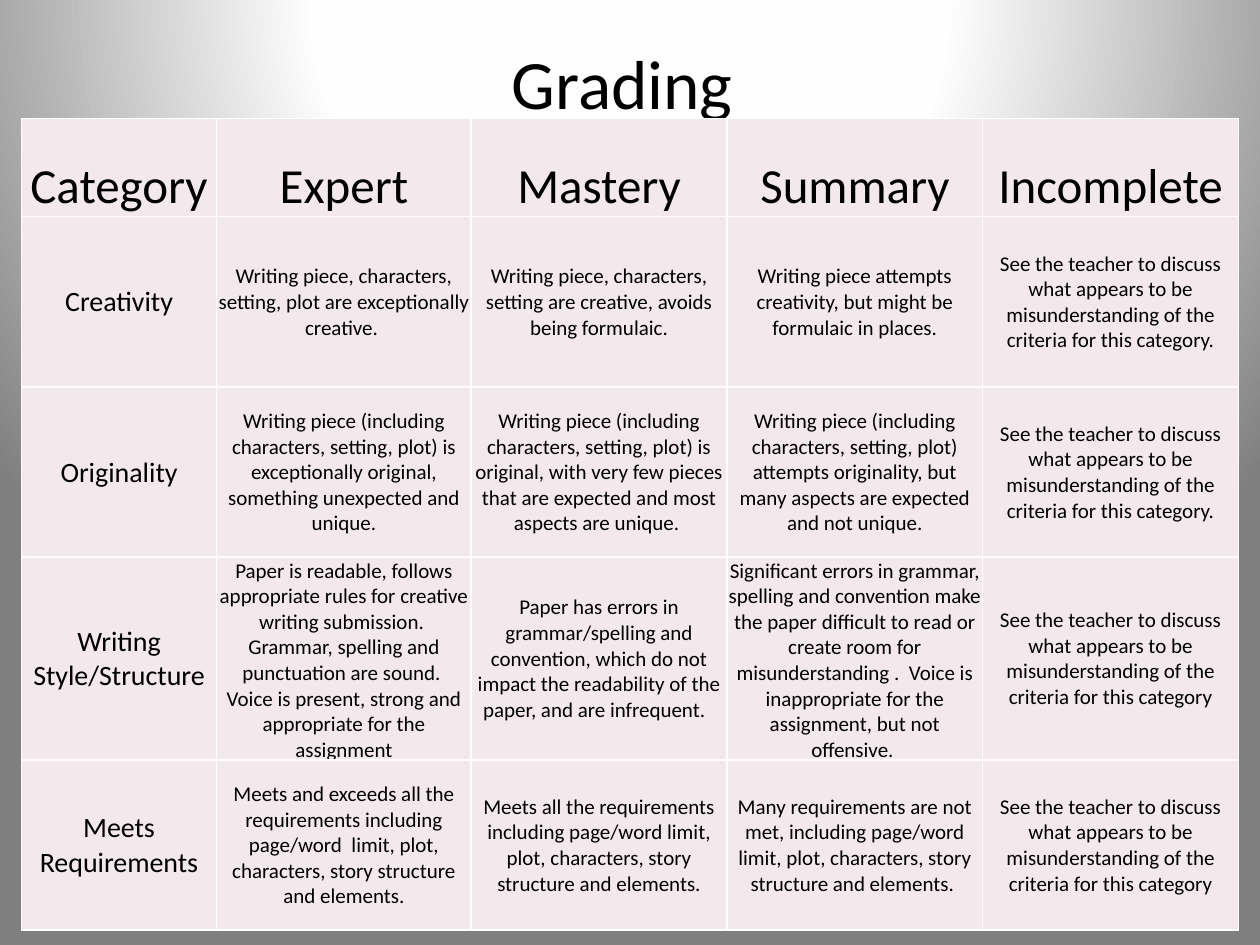
from dataclasses import dataclass
from pptx import Presentation
from pptx.dml.color import RGBColor
from pptx.enum.text import MSO_ANCHOR as Anchor, PP_ALIGN as Align
from pptx.oxml import parse_xml
from pptx.oxml.ns import nsdecls
from pptx.util import Inches, Pt


@dataclass(frozen=True)
class Theme:
    font: str = "Calibri"
    text: str = "000000"
    cell: str = "F3E8EB"
    border: str = "FFFFFF"
    backdrop: tuple = ((0, "FFFFFF"), (40, "FEFEFE"), (100, "7F7F7F"))
    title_size: float = 39.6
    header_size: float = 28
    category_size: float = 16
    body_size: float = 12


THEME = Theme()
COLUMN_WIDTHS = [1.55, 2.02, 2.03, 2.03, 2.03]
ROW_HEIGHTS = [0.78] + [1.35] * 4
SEE_TEACHER = ("See the teacher to discuss what appears to be "
               "misunderstanding of the criteria for this category")

RUBRIC = [
    ["Category", "Expert", "Mastery", "Summary", "Incomplete"],
    ["Creativity",
     "Writing piece, characters, setting, plot are exceptionally creative. ",
     "Writing piece, characters, setting are creative, avoids being formulaic.",
     "Writing piece attempts creativity, but might be formulaic in places.",
     SEE_TEACHER + "."],
    ["Originality",
     "Writing piece (including characters, setting, plot) is exceptionally "
     "original, something unexpected and unique.",
     "Writing piece (including characters, setting, plot) is original, with "
     "very few pieces that are expected and most aspects are unique. ",
     "Writing piece (including characters, setting, plot) attempts "
     "originality, but many aspects are expected and not unique.",
     SEE_TEACHER + "."],
    ["Writing Style/Structure",
     "Paper is readable, follows appropriate rules for creative writing "
     "submission.  Grammar, spelling and punctuation are sound.  Voice is "
     "present, strong and appropriate for the assignment",
     "Paper has errors in grammar/spelling and convention, which do not "
     "impact the readability of the paper, and are infrequent.  ",
     "Significant errors in grammar, spelling and convention make the paper "
     "difficult to read or create room for misunderstanding .  Voice is "
     "inappropriate for the assignment, but not offensive. ",
     SEE_TEACHER],
    ["Meets Requirements",
     "Meets and exceeds all the requirements including page/word  limit, "
     "plot, characters, story structure and elements.",
     "Meets all the requirements including page/word limit, plot, "
     "characters, story structure and elements.",
     "Many requirements are not met, including page/word limit, plot, "
     "characters, story structure and elements. ",
     SEE_TEACHER],
]


def set_background(page):
    """Fill the page with a circular gradient centred above it."""
    stops = "".join(
        f'<a:gs pos="{place * 1000}"><a:srgbClr val="{color}"/></a:gs>'
        for place, color in THEME.backdrop)
    background = parse_xml(
        f'<p:bg {nsdecls("p", "a")}><p:bgPr><a:gradFill rotWithShape="1">'
        f'<a:gsLst>{stops}</a:gsLst><a:path path="circle">'
        '<a:fillToRect l="50000" t="-80000" r="50000" b="180000"/></a:path>'
        '</a:gradFill><a:effectLst/></p:bgPr></p:bg>')
    page.element.cSld.insert(0, background)


def write_text(frame, text, size):
    frame.text = text
    frame.word_wrap = True
    para = frame.paragraphs[0]
    para.alignment = Align.CENTER
    font = para.runs[0].font
    font.name = THEME.font
    font.size = Pt(size)
    font.color.rgb = RGBColor.from_string(THEME.text)


def add_title(page, text):
    box = page.shapes.add_textbox(Inches(0.5), Inches(0.3), Inches(9), Inches(0.7))
    write_text(box.text_frame, text, THEME.title_size)
    box.text_frame.vertical_anchor = Anchor.MIDDLE


def set_borders(cell):
    properties = cell._tc.get_or_add_tcPr()
    for position, side in enumerate(("lnL", "lnR", "lnT", "lnB")):
        properties.insert(position, parse_xml(
            f'<a:{side} {nsdecls("a")} w="{Pt(1)}"><a:solidFill>'
            f'<a:srgbClr val="{THEME.border}"/></a:solidFill></a:{side}>'))


def format_cell(cell, text, size, anchor):
    write_text(cell.text_frame, text, size)
    cell.vertical_anchor = anchor
    cell.margin_left = cell.margin_right = cell.margin_top = Inches(0.01)
    cell.margin_bottom = 0
    cell.fill.solid()
    cell.fill.fore_color.rgb = RGBColor.from_string(THEME.cell)
    set_borders(cell)


def add_rubric(page):
    table = page.shapes.add_table(
        len(ROW_HEIGHTS), len(COLUMN_WIDTHS), Inches(0.17), Inches(0.94),
        Inches(sum(COLUMN_WIDTHS)), Inches(sum(ROW_HEIGHTS))).table
    for column, width in zip(table.columns, COLUMN_WIDTHS):
        column.width = Inches(width)
    for row, height, texts in zip(table.rows, ROW_HEIGHTS, RUBRIC):
        row.height = Inches(height)
        is_header = texts is RUBRIC[0]
        anchor = Anchor.BOTTOM if is_header else Anchor.MIDDLE
        for index, (cell, text) in enumerate(zip(row.cells, texts)):
            size = THEME.body_size if index else THEME.category_size
            format_cell(cell, text, THEME.header_size if is_header else size, anchor)


def main():
    deck = Presentation()
    deck.slide_width, deck.slide_height = Inches(10), Inches(7.5)
    page = deck.slides.add_slide(deck.slide_layouts[6])
    set_background(page)
    add_title(page, "Grading ")
    add_rubric(page)
    deck.save("out.pptx")


if __name__ == "__main__":
    main()
